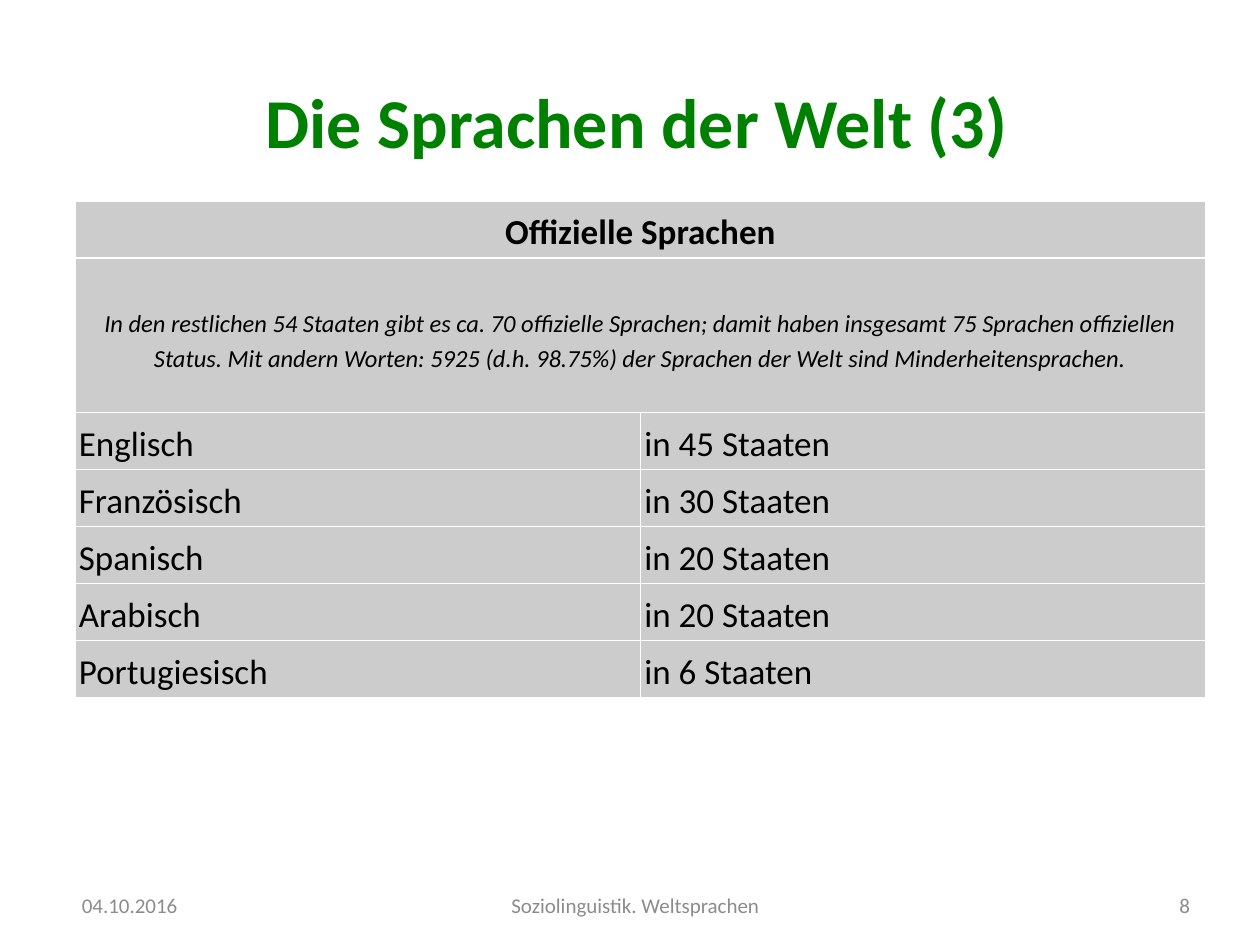
import pptx
import pptx.util
import pptx.dml.color
import pptx.enum.text

Cm = pptx.util.Cm
Pt = pptx.util.Pt
Align = pptx.enum.text.PP_ALIGN
Anchor = pptx.enum.text.MSO_ANCHOR
COLORS = {"title": "008000", "text": "000000", "footer": "8C8C8C", "cell": "CCCCCC"}


def style(paragraph, size, color, alignment, bold=False, italic=False):
    paragraph.alignment = alignment
    paragraph.font.name = "Calibri"
    paragraph.font.size = Pt(size)
    paragraph.font.bold = bold
    paragraph.font.italic = italic
    paragraph.font.color.rgb = pptx.dml.color.RGBColor.from_string(COLORS[color])


def fill_cell(cell, text, size, alignment, bold=False, italic=False):
    cell.text = text
    paragraph = cell.text_frame.paragraphs[0]
    paragraph.line_spacing = 1.15
    style(paragraph, size, "text", alignment, bold, italic)


presentation = pptx.Presentation()
presentation.slide_width = Cm(25.4)
presentation.slide_height = Cm(19.05)
slide = presentation.slides.add_slide(presentation.slide_layouts[5])

title = slide.shapes.title
title.left, title.top, title.width, title.height = Cm(1.4), Cm(0.84), Cm(22.86), Cm(3.18)
title.text_frame.text = "Die Sprachen der Welt (3)"
title.text_frame.vertical_anchor = Anchor.MIDDLE
style(title.text_frame.paragraphs[0], 40, "title", Align.CENTER, bold=True)

footers = [
    ("04.10.2016", 1.4, 5.93, Align.LEFT),
    ("Soziolinguistik. Weltsprachen", 8.79, 8.04, Align.CENTER),
    ("8", 18.31, 5.93, Align.RIGHT),
]
for text, left, width, alignment in footers:
    footer = slide.shapes.add_textbox(Cm(left), Cm(17.74), Cm(width), Cm(1.01))
    footer.text_frame.word_wrap = True
    footer.text_frame.vertical_anchor = Anchor.MIDDLE
    footer.text_frame.text = text
    style(footer.text_frame.paragraphs[0], 12, "footer", alignment)

languages = [
    ("Englisch", 45),
    ("Französisch", 30),
    ("Spanisch", 20),
    ("Arabisch", 20),
    ("Portugiesisch", 6),
]
row_height = Cm(1.15)
note_height = Cm(3.12)
row_count = len(languages) + 2
table = slide.shapes.add_table(
    row_count, 2, Cm(1.51), Cm(4.05), Cm(22.8), row_height * (row_count - 1) + note_height
).table
table.first_row = False
table.horz_banding = False
for row in table.rows:
    row.height = row_height
table.rows[1].height = note_height

for cell in table.iter_cells():
    cell.fill.solid()
    cell.fill.fore_color.rgb = pptx.dml.color.RGBColor.from_string(COLORS["cell"])
    cell.margin_left = cell.margin_right = cell.margin_top = cell.margin_bottom = Cm(0.08)

for row_index in range(2):
    table.cell(row_index, 0).merge(table.cell(row_index, 1))

fill_cell(table.cell(0, 0), "Offizielle Sprachen", 20, Align.CENTER, bold=True)
note = (
    "In den restlichen 54 Staaten gibt es ca. 70 offizielle Sprachen; "
    "damit haben insgesamt 75 Sprachen offiziellen Status. "
    "Mit andern Worten: 5925 (d.h. 98.75%) der Sprachen der Welt sind Minderheitensprachen."
)
fill_cell(table.cell(1, 0), note, 14, Align.CENTER, italic=True)
table.cell(1, 0).margin_top = Cm(0.95)

for row_index, (language, states) in enumerate(languages, start=2):
    fill_cell(table.cell(row_index, 0), language, 20, Align.JUSTIFY)
    fill_cell(table.cell(row_index, 1), f"in {states} Staaten", 20, Align.JUSTIFY)

presentation.save("out.pptx")
